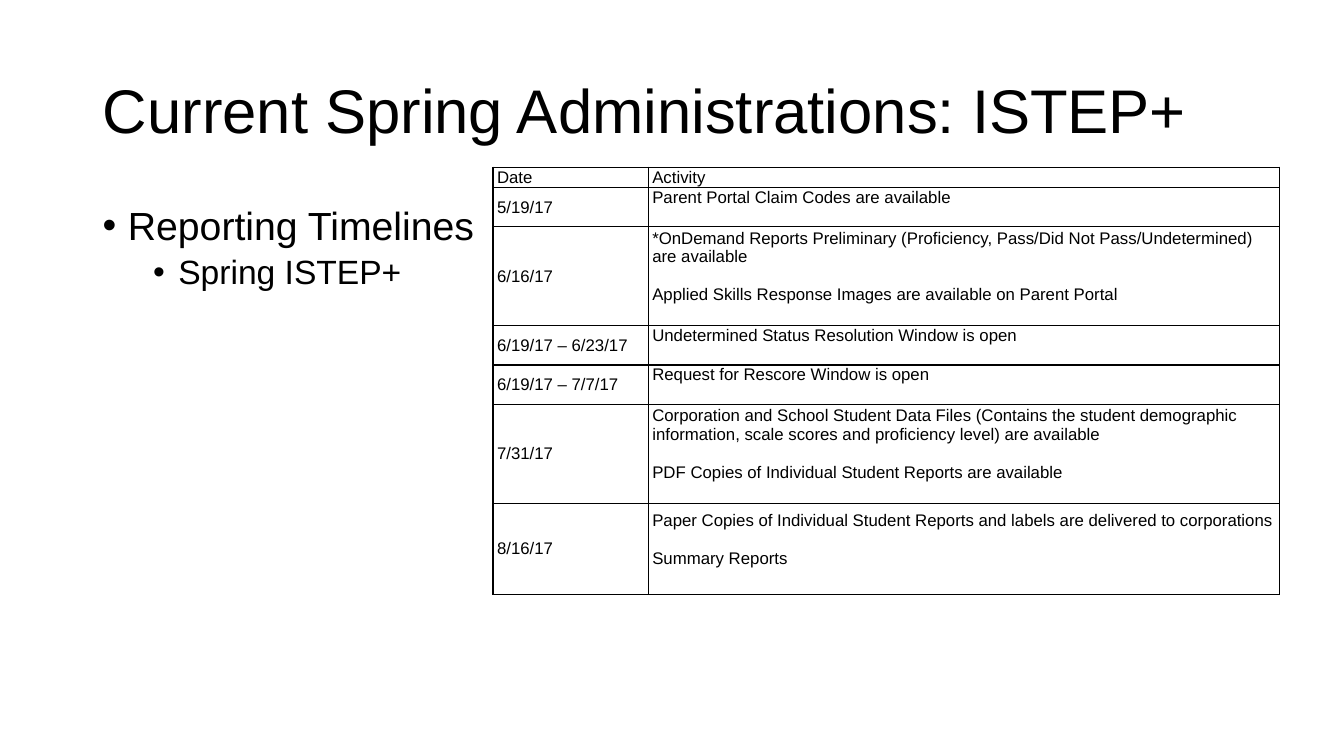
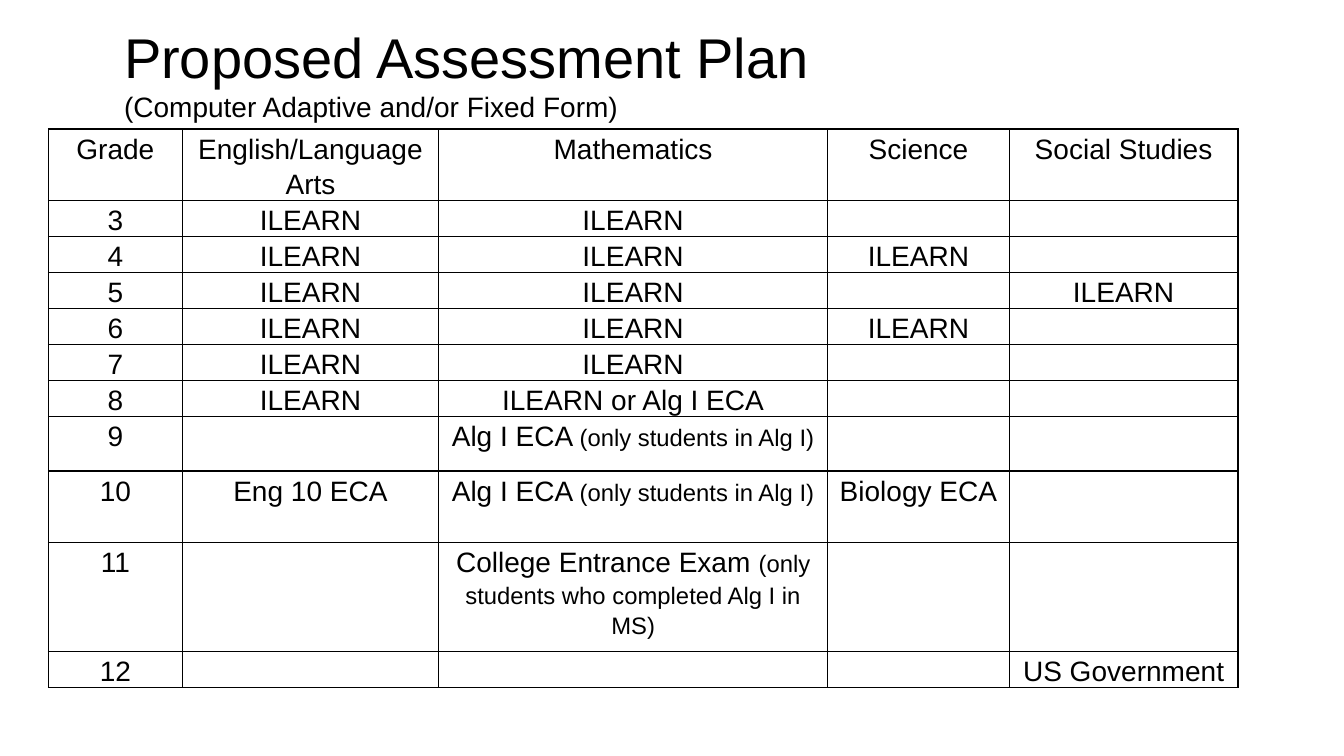
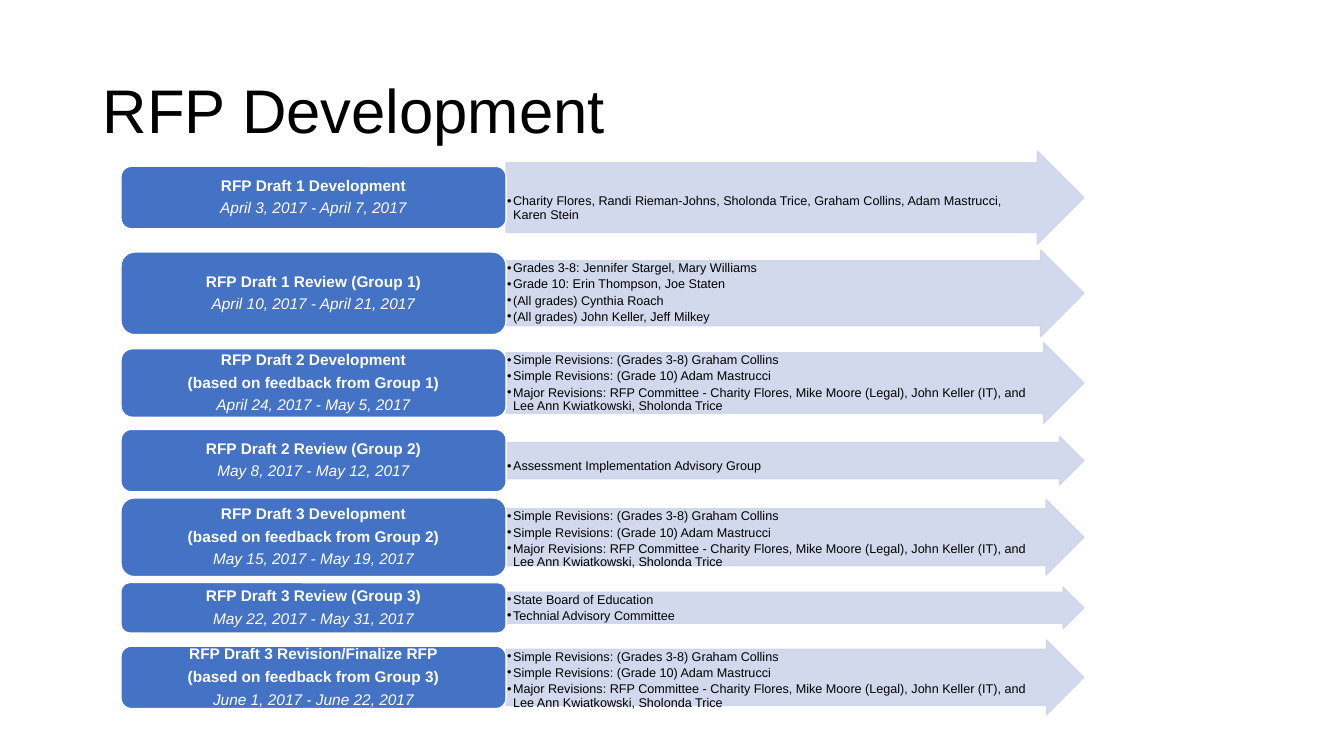
from pptx import Presentation
from pptx.dml.color import RGBColor
from pptx.enum.shapes import MSO_SHAPE as Shape
from pptx.enum.text import MSO_ANCHOR as Anchor, MSO_AUTO_SIZE as AutoSize, PP_ALIGN as Align
from pptx.oxml.ns import qn
from pptx.util import Inches, Pt
from lxml.etree import SubElement

FONT = "Arial"
BLACK, WHITE, BLUE, PALE = "000000", "FFFFFF", "4472C4", "CFD5EA"
TITLE_AT = (0.92, 0.4, 11.5, 1.45)
BLANK_LINE = 0.19

TIMELINE = [
    ("5/19/17", ["Parent Portal Claim Codes are available"]),
    ("6/16/17", ["*OnDemand Reports Preliminary (Proficiency, Pass/Did Not Pass/Undetermined) are available",
                 "Applied Skills Response Images are available on Parent Portal"]),
    ("6/19/17 – 6/23/17", ["Undetermined Status Resolution Window is open"]),
    ("6/19/17 – 7/7/17", ["Request for Rescore Window is open"]),
    ("7/31/17", ["Corporation and School Student Data Files (Contains the student demographic "
                 "information, scale scores and proficiency level) are available",
                 "PDF Copies of Individual Student Reports are available"]),
    ("8/16/17", ["Paper Copies of Individual Student Reports and labels are delivered to corporations",
                 "Summary Reports"]),
]

PLAN = [
    ("Grade", "English/Language Arts", "Mathematics", "Science", "Social Studies"),
    ("3", "ILEARN", "ILEARN", "", ""),
    ("4", "ILEARN", "ILEARN", "ILEARN", ""),
    ("5", "ILEARN", "ILEARN", "", "ILEARN"),
    ("6", "ILEARN", "ILEARN", "ILEARN", ""),
    ("7", "ILEARN", "ILEARN", "", ""),
    ("8", "ILEARN", "ILEARN or Alg I ECA", "", ""),
    ("9", "", "Alg I ECA (only students in Alg I)", "", ""),
    ("10", "Eng 10 ECA", "Alg I ECA (only students in Alg I)", "Biology ECA", ""),
    ("11", "", "College Entrance Exam (only students who completed Alg I in MS)", "", ""),
    ("12", "", "", "", "US Government"),
]

REVISIONS = [
    "Simple Revisions: (Grades 3-8) Graham Collins",
    "Simple Revisions: (Grade 10) Adam Mastrucci",
    "Major Revisions: RFP Committee - Charity Flores, Mike Moore (Legal), John Keller (IT), "
    "and Lee Ann Kwiatkowski, Sholonda Trice",
]

# Each stage: middle, box height, arrow height, text drop, headings, dates, people
STAGES = [
    (1.96, 0.62, 0.92, 0.31, ["RFP Draft 1 Development"], "April 3, 2017 - April 7, 2017",
     ["Charity Flores, Randi Rieman-Johns, Sholonda Trice, Graham Collins, Adam Mastrucci, Karen Stein"]),
    (2.91, 0.82, 0.86, 0, ["RFP Draft 1 Review (Group 1)"], "April 10, 2017 - April 21, 2017",
     ["Grades 3-8: Jennifer Stargel, Mary Williams", "Grade 10: Erin Thompson, Joe Staten",
      "(All grades) Cynthia Roach", "(All grades) John Keller, Jeff Milkey"]),
    (3.8, 0.68, 0.8, 0, ["RFP Draft 2 Development", "(based on feedback from Group 1)"],
     "April 24, 2017 - May 5, 2017", REVISIONS),
    (4.57, 0.62, 0.48, 0.16, ["RFP Draft 2 Review (Group 2)"], "May 8, 2017 - May 12, 2017",
     ["Assessment Implementation Advisory Group"]),
    (5.33, 0.78, 0.75, 0, ["RFP Draft 3 Development", "(based on feedback from Group 2)"],
     "May 15, 2017 - May 19, 2017", REVISIONS),
    (6.03, 0.5, 0.41, 0, ["RFP Draft 3 Review (Group 3)"], "May 22, 2017 - May 31, 2017",
     ["State Board of Education", "Technial Advisory Committee"]),
    (6.72, 0.62, 0.74, 0, ["RFP Draft 3 Revision/Finalize RFP", "(based on feedback from Group 3)"],
     "June 1, 2017 - June 22, 2017", REVISIONS),
]


def colour(value):
    """Turn a hex string into a colour."""
    return RGBColor.from_string(value)


def add_span(para, text, size, ink=BLACK, bold=False, italic=False):
    """Append one formatted run to a paragraph."""
    span = para.add_run()
    span.text = text
    font = span.font
    font.name, font.size, font.bold, font.italic = FONT, Pt(size), bold, italic
    font.color.rgb = colour(ink)


def next_para(frame, align=Align.LEFT, line=1.0, before=0, after=0):
    """Return a fresh paragraph, using the first one while it is empty."""
    first = frame.paragraphs[0]
    fresh = not first.runs
    para = first if fresh else frame.add_paragraph()
    para.alignment, para.line_spacing = align, line
    para.space_before = Pt(0 if fresh else before)
    para.space_after = Pt(after)
    return para


def add_bullet(para, left, hang):
    """Give a paragraph a bullet with a hanging indent."""
    props = para._p.get_or_add_pPr()
    props.set("marL", str(Inches(left)))
    props.set("indent", str(-Inches(hang)))
    SubElement(props, qn("a:buFont"), typeface=FONT)
    SubElement(props, qn("a:buChar"), char="•")


def set_insets(target, left, top, right, bottom):
    """Set the margins of a text frame or a cell."""
    target.margin_left, target.margin_top = Inches(left), Inches(top)
    target.margin_right, target.margin_bottom = Inches(right), Inches(bottom)


def add_page(deck, lines, at=TITLE_AT, line=0.9):
    """Add a title-only slide whose title holds (text, size) lines."""
    page = deck.slides.add_slide(deck.slide_layouts[5])
    title = page.shapes.title
    title.left, title.top, title.width, title.height = map(Inches, at)
    frame = title.text_frame
    frame.word_wrap, frame.auto_size = True, AutoSize.NONE
    frame.vertical_anchor = Anchor.MIDDLE
    for text, size in lines:
        add_span(next_para(frame, line=line), text, size)
    return page


def add_borders(cell):
    """Draw a thin black line on every side of a cell."""
    props = cell._tc.get_or_add_tcPr()
    for side in ("a:lnL", "a:lnR", "a:lnT", "a:lnB"):
        edge = SubElement(props, qn(side), w=str(Pt(1)))
        fill = SubElement(edge, qn("a:solidFill"))
        SubElement(fill, qn("a:srgbClr"), val=BLACK)


def add_grid(page, left, top, widths, heights, inset, anchor):
    """Add an unfilled, bordered table and return it."""
    frame = page.shapes.add_table(len(heights), len(widths), Inches(left), Inches(top),
                                  Inches(sum(widths)), Inches(sum(heights)))
    table = frame.table
    table.first_row = table.horz_banding = False
    for column, width in zip(table.columns, widths):
        column.width = Inches(width)
    for row, height in zip(table.rows, heights):
        row.height = Inches(height)
    for cell in table.iter_cells():
        add_borders(cell)
        cell.fill.background()
        cell.vertical_anchor = anchor
        set_insets(cell, inset, 0, inset, 0)
    return table


def add_block(page, kind, at, fill, line, alpha=100):
    """Add a preset shape and return it with its text frame."""
    block = page.shapes.add_shape(kind, *map(Inches, at))
    block.shadow.inherit = False
    block.fill.solid()
    block.fill.fore_color.rgb = colour(fill)
    block.line.color.rgb = colour(line)
    block.line.width = Pt(1)
    if alpha < 100:
        for paint in block._element.spPr.iter(qn("a:srgbClr")):
            SubElement(paint, qn("a:alpha"), val=str(alpha * 1000))
    block.text_frame.word_wrap = True
    return block, block.text_frame


def add_stage(page, middle, box_height, arrow_height, drop, headings, dates, people):
    """Add one development stage: an arrow of people and a box of dates."""
    arrow, frame = add_block(page, Shape.RIGHT_ARROW,
                             (5.02, middle - arrow_height / 2, 5.73, arrow_height), PALE, PALE, 90)
    arrow.adjustments[0], arrow.adjustments[1] = 0.75, 0.5
    frame.vertical_anchor = Anchor.TOP
    set_insets(frame, 0.01, 0.01 + drop, 0.01 + arrow_height / 4, 0.01)
    for text in people:
        para = next_para(frame, line=0.9, after=1.8)
        add_bullet(para, 0.06, 0.06)
        add_span(para, text, 9)

    box, frame = add_block(page, Shape.ROUNDED_RECTANGLE,
                           (1.2, middle - box_height / 2, 3.82, box_height), BLUE, WHITE)
    frame.vertical_anchor = Anchor.MIDDLE
    set_insets(frame, 0.05, 0.02, 0.05, 0.02)
    for text in headings + [dates]:
        is_date = text == dates
        para = next_para(frame, Align.CENTER, 0.9, after=0 if is_date else 4.3)
        add_span(para, text, 11, WHITE, bold=not is_date, italic=is_date)


def build_timeline(deck):
    """Build the slide of reporting dates."""
    page = add_page(deck, [("Current Spring Administrations: ISTEP+", 44)])
    frame = page.shapes.add_textbox(Inches(0.92), Inches(2), Inches(3.97), Inches(4.76)).text_frame
    frame.word_wrap = True
    for text, size, left in (("Reporting Timelines", 28, 0.25), ("Spring ISTEP+", 24, 0.75)):
        para = next_para(frame, line=0.9, before=5)
        add_bullet(para, left, 0.25)
        add_span(para, text, size)

    heights = [0.19, 0.37, 0.93, 0.37, 0.37, 0.93, 0.91]
    table = add_grid(page, 4.89, 1.66, [1.54, 6.26], heights, 0.04, Anchor.MIDDLE)
    for row, (date, activities) in enumerate([("Date", ["Activity"])] + TIMELINE):
        add_span(next_para(table.cell(row, 0).text_frame), date, 12)
        cell = table.cell(row, 1)
        if row:
            cell.margin_bottom = Inches(BLANK_LINE)
        for text in activities:
            add_span(next_para(cell.text_frame, before=BLANK_LINE * 72), text, 12)


def build_plan(deck):
    """Build the slide of assessments by grade."""
    page = add_page(deck, [("Proposed Assessment Plan", 40), ("(Computer Adaptive and/or Fixed Form)", 20)],
                    (1.13, 0.17, 10.67, 1.11), 1.0)
    heights = [0.71] + [0.34] * 6 + [0.54, 0.71, 1.08, 0.34]
    table = add_grid(page, 0.48, 1.28, [1.33, 2.54, 3.86, 1.8, 2.27], heights, 0.07, Anchor.TOP)
    for cell, text in zip(table.iter_cells(), sum(PLAN, ())):
        if text:
            para = next_para(cell.text_frame, Align.CENTER, 1.15)
            lead, mark, note = text.partition("(")
            add_span(para, lead, 20)
            if note:
                add_span(para, mark + note, 17)


def build_development(deck):
    """Build the slide of drafting stages."""
    page = add_page(deck, [("RFP Development", 44)])
    for stage in STAGES:
        add_stage(page, *stage)


def main():
    """Build and save the deck."""
    deck = Presentation()
    deck.slide_width, deck.slide_height = Inches(13.33), Inches(7.5)
    build_timeline(deck)
    build_plan(deck)
    build_development(deck)
    deck.save("out.pptx")


if __name__ == "__main__":
    main()
